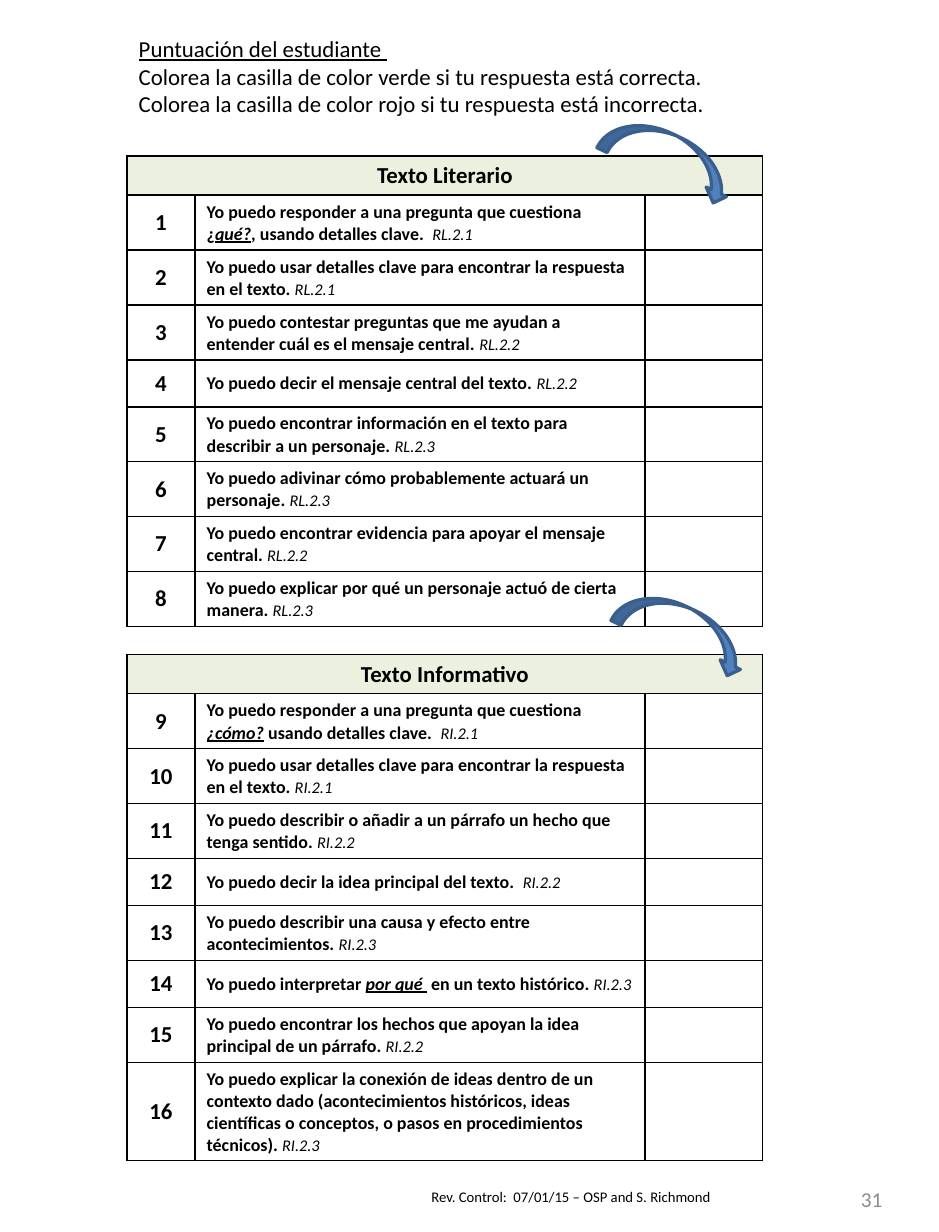
from pptx import Presentation
from pptx.dml.color import RGBColor
from pptx.enum.shapes import MSO_SHAPE
from pptx.enum.text import MSO_ANCHOR, MSO_AUTO_SIZE, PP_ALIGN
from pptx.util import Inches, Pt
from lxml import etree
from pptx.oxml.ns import qn

LEFT, CENTER, RIGHT = PP_ALIGN.LEFT, PP_ALIGN.CENTER, PP_ALIGN.RIGHT
TOP, MIDDLE = MSO_ANCHOR.TOP, MSO_ANCHOR.MIDDLE
CURVED_ARROW = MSO_SHAPE.CURVED_DOWN_ARROW
NO_AUTOFIT = MSO_AUTO_SIZE.NONE

FONT = "Calibri"
COLORS = {"text": "000000", "page": "8C8C8C", "header": "EBF1DE",
          "cell": "FFFFFF", "arrow": "4F81BD", "arrow_line": "3A5F8C"}

HEADING = ["Puntuación del estudiante ",
           "Colorea la casilla de color verde si tu respuesta está correcta. ",
           "Colorea la casilla de color rojo si tu respuesta está incorrecta."]
FOOTER = "Rev. Control:  07/01/15 – OSP and S. Richmond"
PAGE = "31"

# Each goal: statement (stressed words between asterisks), standard, text lines
LITERARY = [
    ("Yo puedo responder a una pregunta que cuestiona ¿*qué?*, usando detalles clave.  ", "RL.2.1", 2),
    ("Yo puedo usar detalles clave para encontrar la respuesta en el texto. ", "RL.2.1", 2),
    ("Yo puedo contestar preguntas que me ayudan a entender cuál es el mensaje central. ", "RL.2.2", 2),
    ("Yo puedo decir el mensaje central del texto. ", "RL.2.2", 1),
    ("Yo puedo encontrar información en el texto para describir a un personaje. ", "RL.2.3", 2),
    ("Yo puedo adivinar cómo probablemente actuará un personaje. ", "RL.2.3", 2),
    ("Yo puedo encontrar evidencia para apoyar el mensaje central. ", "RL.2.2", 2),
    ("Yo puedo explicar por qué un personaje actuó de cierta manera. ", "RL.2.3", 2),
]
INFORMATIVE = [
    ("Yo puedo responder a una pregunta que cuestiona *¿cómo?* usando detalles clave.  ", "RI.2.1", 2),
    ("Yo puedo usar detalles clave para encontrar la respuesta en el texto. ", "RI.2.1", 2),
    ("Yo puedo describir o añadir a un párrafo un hecho que tenga sentido. ", "RI.2.2", 2),
    ("Yo puedo decir la idea principal del texto.  ", "RI.2.2", 1),
    ("Yo puedo describir una causa y efecto entre acontecimientos. ", "RI.2.3", 2),
    ("Yo puedo interpretar *por qué * en un texto histórico. ", "RI.2.3", 1),
    ("Yo puedo encontrar los hechos que apoyan la idea principal de un párrafo. ", "RI.2.2", 2),
    ("Yo puedo explicar la conexión de ideas dentro de un contexto dado (acontecimientos históricos, "
     "ideas científicas o conceptos, o pasos en procedimientos técnicos). ", "RI.2.3", 4),
]
# Title, top, first number, goals
SECTIONS = [("Texto Informativo", 655, 9, INFORMATIVE),
            ("Texto Literario", 156, 1, LITERARY)]
ARROWS = [(614, 608), (600, 135)]

TABLE_LEFT = 127
COLUMNS = [68, 450, 118]
HEADER_HEIGHT = 39
LINE_HEIGHTS = {1: 47, 2: 55, 4: 98}
PX = 914400 / 117.4


def px(n):
    """Turn pixels into EMU."""
    return round(n * PX)


def rgb(name):
    """Look up a named colour."""
    return RGBColor.from_string(COLORS[name])


def add_run(p, text, size, color="text", bold=False, italic=False, underline=False):
    """Add a formatted run to a paragraph."""
    r = p.add_run()
    r.text = text
    f = r.font
    f.name, f.size, f.bold, f.italic, f.underline = FONT, Pt(size), bold, italic, underline
    f.color.rgb = rgb(color)


def style_cell(cell, fill):
    """Give a cell its borders, fill and middle anchor."""
    tcPr = cell._tc.get_or_add_tcPr()
    for side in ("a:lnL", "a:lnR", "a:lnT", "a:lnB"):
        ln = etree.SubElement(tcPr, qn(side), w=str(Pt(1)))
        solid = etree.SubElement(ln, qn("a:solidFill"))
        etree.SubElement(solid, qn("a:srgbClr"), val=COLORS["text"])
    cell.fill.solid()
    cell.fill.fore_color.rgb = rgb(fill)
    cell.vertical_anchor = MIDDLE


def add_centered(cell, text):
    """Write a bold centred label in a cell."""
    p = cell.text_frame.paragraphs[0]
    p.alignment = CENTER
    add_run(p, text, 14, bold=True)


def add_section(slide, title, top, first, goals):
    """Draw one table of numbered goals with an empty score column."""
    heights = [HEADER_HEIGHT] + [LINE_HEIGHTS[lines] for _, _, lines in goals]
    frame = slide.shapes.add_table(len(heights), len(COLUMNS), px(TABLE_LEFT), px(top),
                                   px(sum(COLUMNS)), px(sum(heights)))
    table = frame.table
    table.first_row = table.horz_banding = False
    for column, width in zip(table.columns, COLUMNS):
        column.width = px(width)
    for i, (row, height) in enumerate(zip(table.rows, heights)):
        row.height = px(height)
        for cell in row.cells:
            style_cell(cell, "cell" if i else "header")
    table.cell(0, 0).merge(table.cell(0, len(COLUMNS) - 1))
    add_centered(table.cell(0, 0), title)
    for i, (statement, standard, _) in enumerate(goals, 1):
        add_centered(table.cell(i, 0), str(first + i - 1))
        p = table.cell(i, 1).text_frame.paragraphs[0]
        for k, part in enumerate(statement.split("*")):
            stressed = k % 2 == 1
            add_run(p, part, 11, bold=True, italic=stressed, underline=stressed)
        add_run(p, standard, 10, italic=True)


def add_label(slide, box, text, size, color, align, anchor):
    """Add a one-line text box."""
    tf = slide.shapes.add_textbox(*map(px, box)).text_frame
    tf.word_wrap = True
    tf.vertical_anchor = anchor
    p = tf.paragraphs[0]
    p.alignment = align
    add_run(p, text, size, color)


def add_heading(slide):
    """Fill the title with the heading and the colouring instructions."""
    sp = slide.shapes.title
    sp.left, sp.top, sp.width, sp.height = map(px, (127, 29, 626, 95))
    tf = sp.text_frame
    tf.word_wrap, tf.auto_size, tf.vertical_anchor = True, NO_AUTOFIT, TOP
    for i, line in enumerate(HEADING):
        p = tf.add_paragraph() if i else tf.paragraphs[0]
        p.alignment = LEFT
        add_run(p, line, 14, underline=i == 0)


def add_arrow(slide, left, top):
    """Add a tilted curved arrow pointing to the score column."""
    sp = slide.shapes.add_shape(CURVED_ARROW, px(left), px(top), px(140), px(45))
    sp.rotation = 25.4
    sp.shadow.inherit = False
    sp.fill.solid()
    sp.fill.fore_color.rgb = rgb("arrow")
    sp.line.color.rgb = rgb("arrow_line")
    sp.line.width = Pt(2)


prs = Presentation()
prs.slide_width, prs.slide_height = Inches(8), Inches(10.5)
slide = prs.slides.add_slide(prs.slide_layouts[5])
add_heading(slide)
add_label(slide, (420, 1183, 470, 29), FOOTER, 9, "text", LEFT, TOP)
add_label(slide, (792, 1167, 102, 66), PAGE, 13, "page", RIGHT, MIDDLE)
for section in SECTIONS:
    add_section(slide, *section)
for arrow in ARROWS:
    add_arrow(slide, *arrow)
prs.save("out.pptx")
